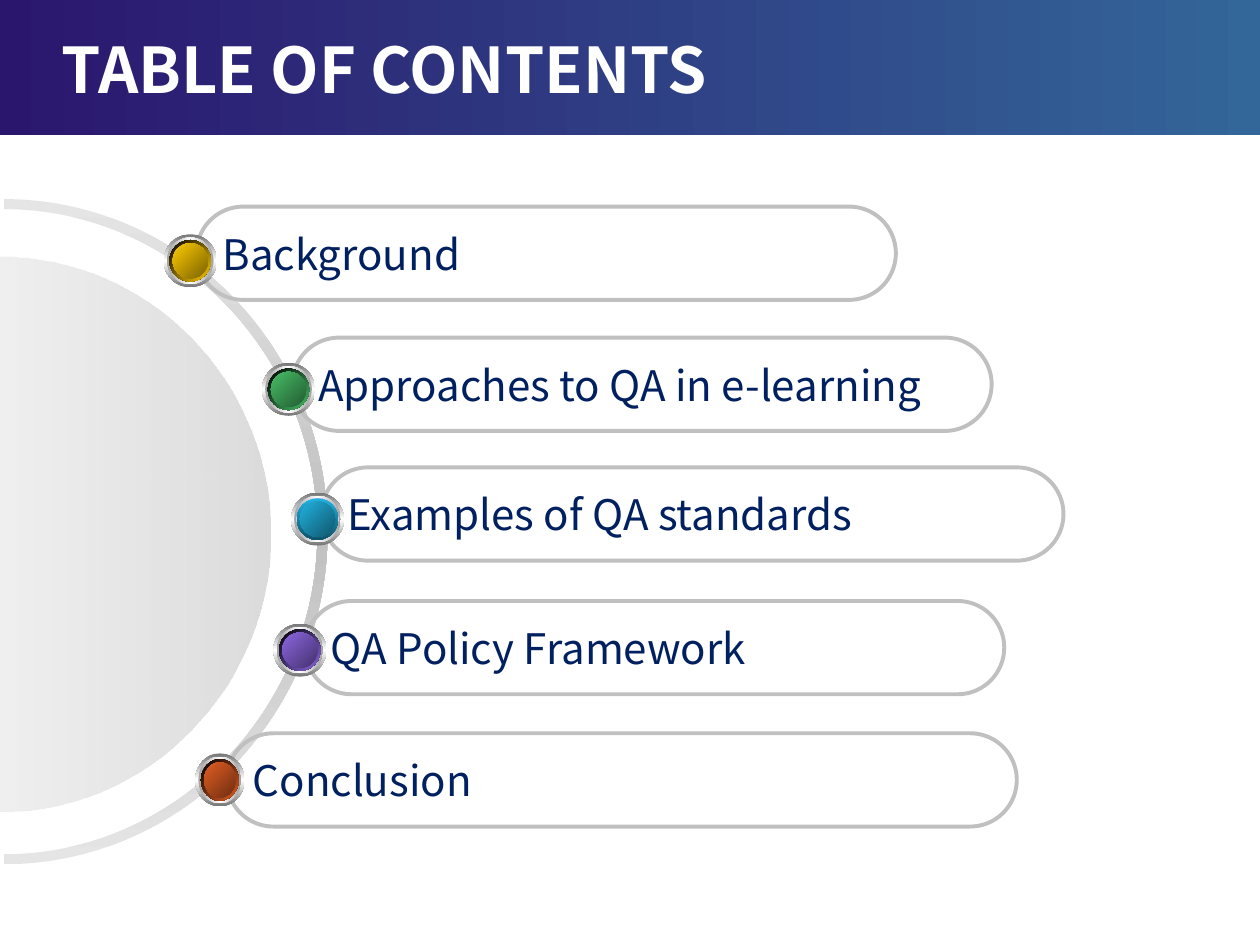
from dataclasses import dataclass

from lxml import etree
from pptx import Presentation
from pptx.dml.color import RGBColor
from pptx.enum import shapes, text
from pptx.oxml import ns
from pptx.util import Inches, Pt


@dataclass(frozen=True)
class Theme:
    font: str = "Noto Sans CJK KR"
    title_size: int = 36
    entry_size: int = 24
    title: str = "FFFFFF"
    entry: str = "002060"
    outline: str = "C0C0C0"
    outline_width: float = 2.25
    header: tuple = ("2B166E", "336699")
    ring: tuple = ("E5E5E5", "C0C0C0", "E5E5E5")
    disc: tuple = ("FFFFFF", "C0C0C0")
    disc_opacity: tuple = (48, 56)
    bezel: tuple = ("767676", "FFFFFF", "767676")
    collar: tuple = ("A2A2A2", "FFFFFF", "A2A2A2")
    glow: tuple = ("FFFFFF", "9999FF", "FFFFFF")
    base: tuple = ("7575C3", "9999FF", "7575C3")


THEME = Theme()
PILL_HEIGHT = 0.74
KNOB_HEIGHT = 0.42
QUARTER_HANDLE = 0.55  # Bezier handle of a quarter ellipse, as part of its radius

# label, pill (left, top, width), knob (left, top, width),
# rim colours, rim angle, face colours
ENTRIES = [
    ("Background", (1.56, 1.64, 5.55), (1.3, 1.86, 0.42),
     ("000000", "FFCC00"), 45, ("FFCC00", "7C6300")),
    ("Approaches to QA in e-learning", (2.32, 2.68, 5.55), (2.08, 2.88, 0.42),
     ("000000", "48BE67"), 45, ("48BE67", "235C32")),
    ("Examples of QA standards", (2.55, 3.71, 5.89), (2.31, 3.91, 0.42),
     ("21B3E1", "0F5368"), 90, ("21B3E1", "10576D")),
    ("QA Policy Framework", (2.42, 4.77, 5.55), (2.17, 4.95, 0.42),
     ("000000", "8D67E1"), 45, ("8D67E1", "45326D")),
    ("Conclusion", (1.8, 5.82, 6.27), (1.55, 5.98, 0.39),
     ("000000", "E35E23"), 45, ("E35E23", "6E2E11")),
]


def fill_gradient(shape, colours, angle, opacity=None):
    """Spread the colours evenly, clockwise angle in degrees, with no outline."""
    shape.shadow.inherit = False
    shape.line.fill.background()
    shape.fill.gradient()
    shape.fill.gradient_angle = (360 - angle) % 360
    stops = shape.element.spPr.find(".//" + ns.qn("a:gsLst"))
    for stop in list(stops):
        stops.remove(stop)
    for i, colour in enumerate(colours):
        position = round(100000 * i / (len(colours) - 1))
        stop = etree.SubElement(stops, ns.qn("a:gs"), pos=str(position))
        rgb = etree.SubElement(stop, ns.qn("a:srgbClr"), val=colour)
        if opacity:
            etree.SubElement(rgb, ns.qn("a:alpha"), val=str(opacity[i] * 1000))


def add_preset(slide, kind, left, top, width, height):
    return slide.shapes.add_shape(
        kind, Inches(left), Inches(top), Inches(width), Inches(height))


def right_arc(x, y, rx, ry):
    """Nodes and handles of the right half of an ellipse, from top to bottom."""
    hx, hy = rx * QUARTER_HANDLE, ry * QUARTER_HANDLE
    return [(x, y - ry), (x + hx, y - ry), (x + rx, y - hy), (x + rx, y),
            (x + rx, y + hy), (x + hx, y + ry), (x, y + ry)]


def add_curved(slide, arcs, left, top, width, height):
    """Join the arcs into one closed outline inside the given frame."""
    points = [(Inches(x), Inches(y)) for arc in arcs for x, y in arc]
    builder = slide.shapes.build_freeform(*points[0])
    builder.add_line_segments(points[1:], close=True)
    shape = builder.convert_to_shape()
    outline = shape.element.spPr.find(".//" + ns.qn("a:pathLst"))[0]
    dx, dy = shape.left - Inches(left), shape.top - Inches(top)
    for point in outline.iter(ns.qn("a:pt")):
        point.set("x", str(int(point.get("x")) + dx))
        point.set("y", str(int(point.get("y")) + dy))
    shape.left, shape.top = Inches(left), Inches(top)
    shape.width, shape.height = Inches(width), Inches(height)
    outline.set("w", str(shape.width))
    outline.set("h", str(shape.height))

    # Each arc is one node followed by two curves of three points.
    segments = outline.findall(ns.qn("a:lnTo"))
    for start in range(0, len(segments), 7):
        for first in (start, start + 3):
            curve = etree.Element(ns.qn("a:cubicBezTo"))
            segments[first].addprevious(curve)
            for segment in segments[first:first + 3]:
                curve.append(segment[0])
                outline.remove(segment)
    return shape


def write(frame, words, size, colour, bold=False):
    frame.vertical_anchor = text.MSO_ANCHOR.MIDDLE
    paragraph = frame.paragraphs[0]
    paragraph.text = words
    paragraph.alignment = text.PP_ALIGN.LEFT
    font = paragraph.font
    font.name, font.size, font.bold = THEME.font, Pt(size), bold
    font.color.rgb = RGBColor.from_string(colour)


def add_header(slide):
    band = add_preset(slide, shapes.MSO_SHAPE.RECTANGLE, 0, 0, 10, 1.07)
    fill_gradient(band, THEME.header, 0)
    title = slide.shapes.add_textbox(
        Inches(0.39), Inches(0.23), Inches(6.75), Inches(0.62))
    title.text_frame.word_wrap = True
    write(title.text_frame, "TABLE OF CONTENTS", THEME.title_size,
          THEME.title, bold=True)


def add_dial(slide):
    outer = right_arc(0.03, 4.22, 2.57, 2.64)
    inner = right_arc(0.03, 4.22, 2.49, 2.56)
    ring = add_curved(slide, [outer, inner[::-1]], -2.62, 1.58, 5.22, 5.28)
    fill_gradient(ring, THEME.ring, 90)
    disc = add_curved(slide, [right_arc(0, 4.24, 2.15, 2.2)],
                      -2.15, 2.04, 4.3, 4.4)
    fill_gradient(disc, THEME.disc, 0, THEME.disc_opacity)


def add_pill(slide, label, left, top, width):
    pill = add_preset(slide, shapes.MSO_SHAPE.ROUNDED_RECTANGLE,
                      left, top, width, PILL_HEIGHT)
    pill.adjustments[0] = 0.5
    pill.shadow.inherit = False
    pill.fill.background()
    pill.line.color.rgb = RGBColor.from_string(THEME.outline)
    pill.line.width = Pt(THEME.outline_width)
    pill.text_frame.word_wrap = False
    write(pill.text_frame, label, THEME.entry_size, THEME.entry)


def add_knob(slide, left, top, width, rim, rim_angle, face):
    """Stack ever smaller ellipses into a bevelled button."""
    layers = [
        (0, THEME.bezel, 90),
        (0.05, THEME.collar, 0),
        (0.09, THEME.glow, 45),
        (0.09, rim, rim_angle),
        (0.14, THEME.base, 315),
        (0.14, face, 45),
    ]
    for shrink, colours, angle in layers:
        layer = add_preset(slide, shapes.MSO_SHAPE.OVAL,
                           left + shrink / 2, top + shrink / 2,
                           width - shrink, KNOB_HEIGHT - shrink)
        fill_gradient(layer, colours, angle)


def main():
    deck = Presentation()
    deck.slide_width, deck.slide_height = Inches(10), Inches(7.5)
    slide = deck.slides.add_slide(deck.slide_layouts[6])
    add_header(slide)
    add_dial(slide)
    for label, pill, knob, rim, rim_angle, face in ENTRIES:
        add_pill(slide, label, *pill)
        add_knob(slide, *knob, rim, rim_angle, face)
    deck.save("out.pptx")


if __name__ == "__main__":
    main()
